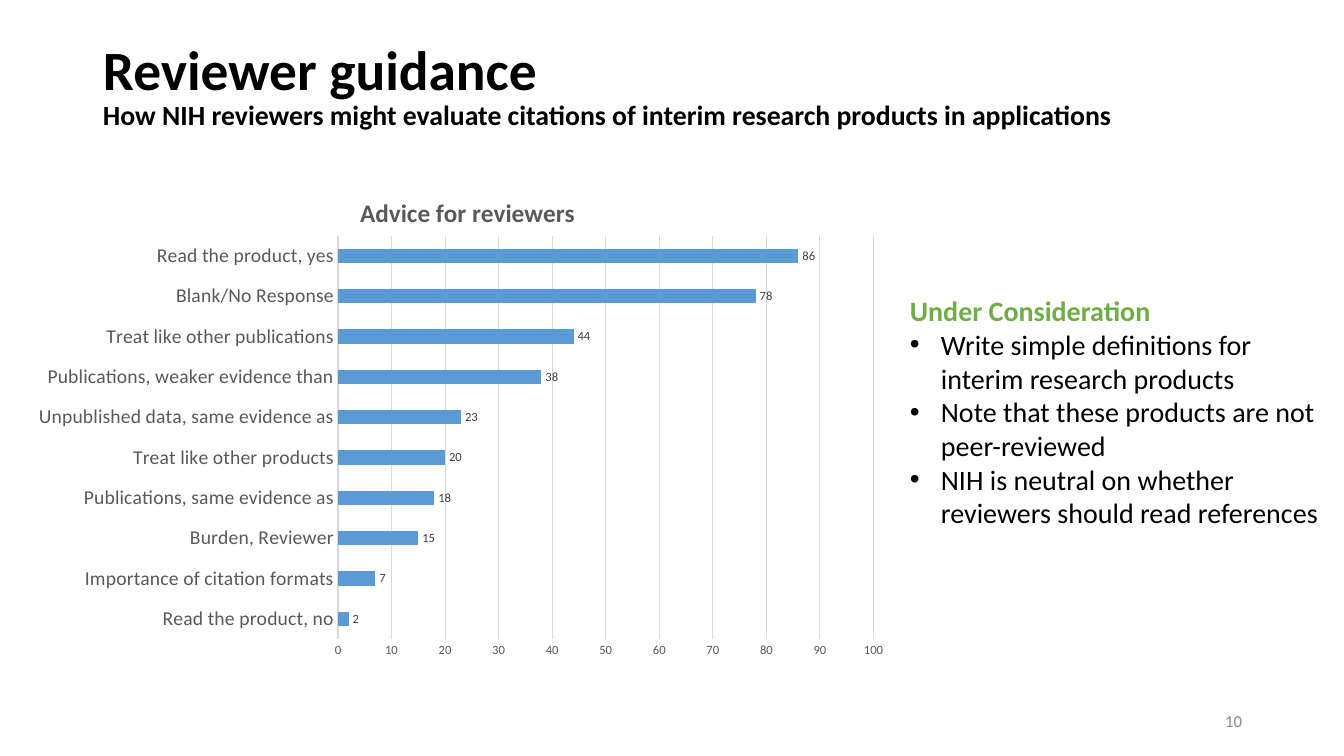
from lxml.etree import SubElement
from pptx import Presentation
from pptx.chart.data import CategoryChartData
from pptx.dml.color import RGBColor
from pptx.enum.chart import XL_CHART_TYPE, XL_LABEL_POSITION, XL_TICK_MARK
from pptx.enum.text import MSO_ANCHOR, PP_ALIGN
from pptx.oxml import parse_xml
from pptx.oxml.ns import nsdecls, qn
from pptx.util import Pt

PX = 12192000 / 1344
BLACK = RGBColor(0, 0, 0)
GREEN = RGBColor(0x70, 0xAD, 0x47)
BLUE = RGBColor(0x5B, 0x9B, 0xD5)
GRAY = RGBColor(0x59, 0x59, 0x59)
DARK = RGBColor(0x40, 0x40, 0x40)
PALE = RGBColor(0xD9, 0xD9, 0xD9)
MUTED = RGBColor(0x8C, 0x8C, 0x8C)

ADVICE = [
    ("Read the product, no", 2),
    ("Importance of citation formats", 7),
    ("Burden, Reviewer", 15),
    ("Publications, same evidence as", 18),
    ("Treat like other products", 20),
    ("Unpublished data, same evidence as", 23),
    ("Publications, weaker evidence than", 38),
    ("Treat like other publications", 44),
    ("Blank/No Response", 78),
    ("Read the product, yes", 86),
]
IDEAS = [
    "Write simple definitions for interim research products",
    "Note that these products are not peer-reviewed",
    "NIH is neutral on whether reviewers should read references",
]


def px(count):
    return round(count * PX)


def style(font, size, color, bold=False):
    font.name = "Calibri"
    font.size = Pt(size)
    font.color.rgb = color
    font.bold = bold


def add_text(slide, box, lines, anchor=MSO_ANCHOR.TOP):
    """Add a text box; each line is (text, size, color, bold)."""
    frame = slide.shapes.add_textbox(*map(px, box)).text_frame
    frame.word_wrap = True
    frame.vertical_anchor = anchor
    for i, (text, *look) in enumerate(lines):
        para = frame.paragraphs[0] if i == 0 else frame.add_paragraph()
        para.text = text
        style(para.font, *look)
    return frame.paragraphs


def add_title(slide, box):
    lines = [
        ("Reviewer guidance", 39.6, BLACK, True),
        ("How NIH reviewers might evaluate citations of interim "
         "research products in applications", 19.8, BLACK, True),
    ]
    for para in add_text(slide, box, lines, MSO_ANCHOR.MIDDLE):
        para.line_spacing = 0.9


def add_ideas(slide, box):
    lines = [("Under Consideration", 20, GREEN, True)]
    lines += [(idea, 20, BLACK, False) for idea in IDEAS]
    for para in add_text(slide, box, lines)[1:]:
        props = para._p.get_or_add_pPr()
        props.set("marL", str(px(31)))
        props.set("indent", str(-px(31)))
        SubElement(props, qn("a:buFont")).set("typeface", "Arial")
        SubElement(props, qn("a:buChar")).set("char", "•")


def add_number(slide, box):
    lines = [("10", 12, MUTED, False)]
    add_text(slide, box, lines, MSO_ANCHOR.MIDDLE)[0].alignment = PP_ALIGN.RIGHT


def layout(target=None, **spans):
    """Manual chart layout, as fractions of the chart's box."""
    parts = [f'<c:layoutTarget val="{target}"/>'] if target else []
    parts += [f'<c:{key}Mode val="edge"/>' for key in "xy"]
    parts += [f'<c:{key} val="{val:.2f}"/>' for key, val in spans.items()]
    return parse_xml(f'<c:layout {nsdecls("c")}><c:manualLayout>'
                     f'{"".join(parts)}</c:manualLayout></c:layout>')


def place(node, after, frame):
    """Give a chart node its layout, in place of any old one."""
    old = node.find(qn("c:layout"))
    if old is not None:
        node.remove(old)
    if after is None:
        node.insert(0, frame)
    else:
        node.find(qn(after)).addnext(frame)


def add_bars(slide, box):
    data = CategoryChartData()
    data.categories = [name for name, _ in ADVICE]
    data.add_series("Series 1", [count for _, count in ADVICE])
    chart = slide.shapes.add_chart(
        XL_CHART_TYPE.BAR_CLUSTERED, *map(px, box), data).chart
    style(chart.font, 10, BLACK)
    chart.has_legend = False

    title = chart.chart_title
    para = title.text_frame.paragraphs[0]
    para.text = "Advice for reviewers"
    style(para.font, 18, GRAY, True)
    title.include_in_layout = False
    place(title._element, "c:tx", layout(x=0.38, y=0.04))
    place(chart._chartSpace.chart.plotArea, None,
          layout("inner", x=0.36, y=0.13, w=0.61, h=0.81))

    names, scale = chart.category_axis, chart.value_axis
    for axis, size in ((names, 14), (scale, 9)):
        style(axis.tick_labels.font, size, GRAY)
        axis.major_tick_mark = axis.minor_tick_mark = XL_TICK_MARK.NONE
    scale.minimum_scale, scale.maximum_scale, scale.major_unit = 0, 100, 10
    scale.format.line.fill.background()
    names.has_major_gridlines = False
    scale.has_major_gridlines = True
    for line in (names.format.line, scale.major_gridlines.format.line):
        line.color.rgb = PALE
        line.width = Pt(0.75)

    plot = chart.plots[0]
    plot.gap_width = 182
    plot.vary_by_categories = False
    fill = plot.series[0].format.fill
    fill.solid()
    fill.fore_color.rgb = BLUE
    plot.has_data_labels = True
    labels = plot.data_labels
    labels.show_value = True
    labels.position = XL_LABEL_POSITION.OUTSIDE_END
    style(labels.font, 9, DARK)


def main():
    deck = Presentation()
    deck.slide_width, deck.slide_height = px(1344), px(756)
    slide = deck.slides.add_slide(deck.slide_layouts[6])
    add_title(slide, (93, 40, 1159, 94))
    add_number(slide, (950, 701, 302, 40))
    add_bars(slide, (22, 171, 878, 498))
    add_ideas(slide, (900, 289, 443, 248))
    deck.save("out.pptx")


if __name__ == "__main__":
    main()
